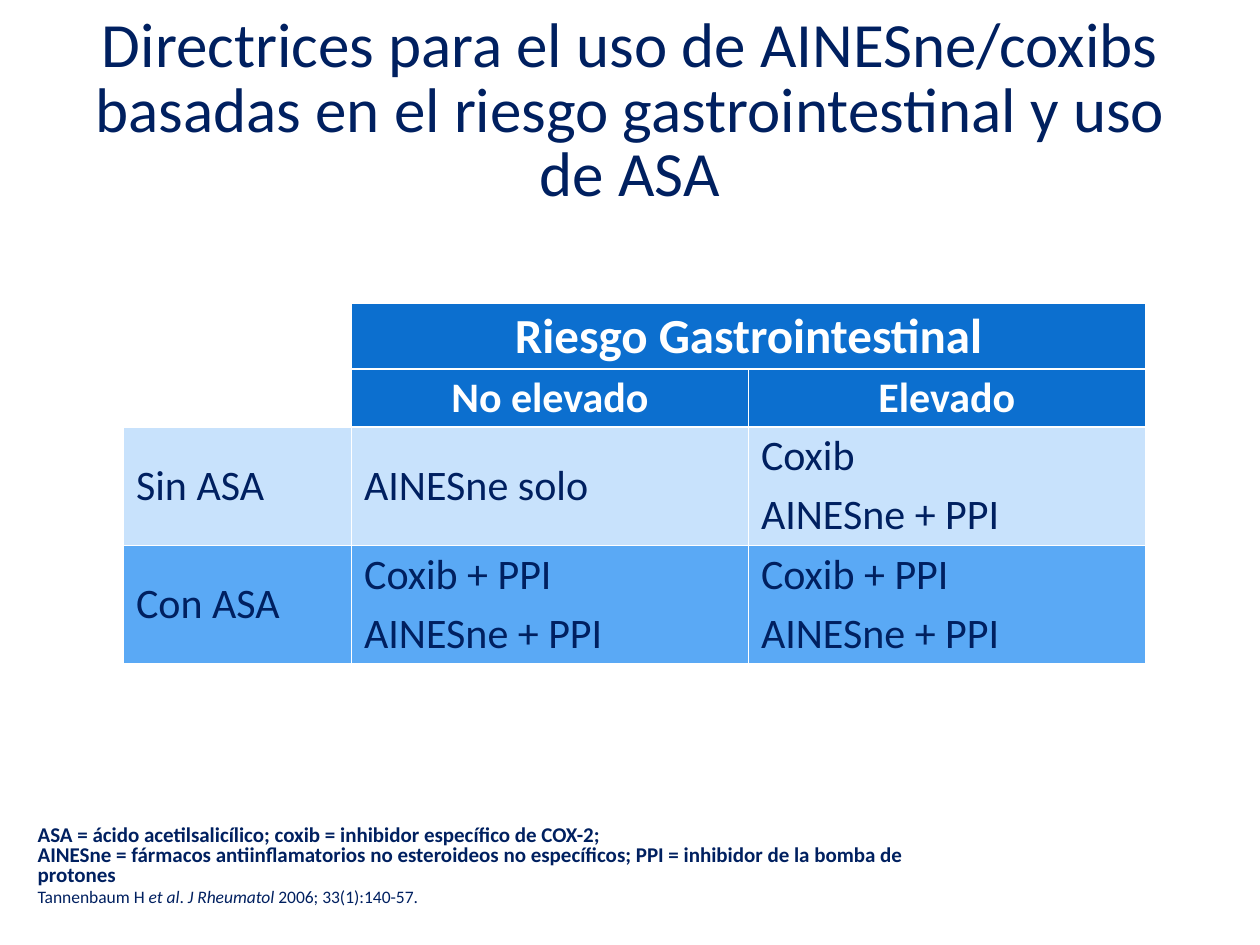
from dataclasses import dataclass

from lxml.etree import SubElement
from pptx import Presentation
from pptx.dml.color import RGBColor
from pptx.enum.text import MSO_ANCHOR, PP_ALIGN
from pptx.oxml.ns import qn
from pptx.util import Inches, Pt


@dataclass(frozen=True)
class Theme:
    font: str = "Calibri"
    navy: str = "002060"
    white: str = "FFFFFF"
    header: str = "0C6FCF"
    light: str = "C8E2FC"
    medium: str = "5AA9F5"
    title_size: int = 36
    heading_size: int = 28
    body_size: int = 24
    note_size: int = 12
    citation_size: int = 10


@dataclass(frozen=True)
class Span:
    text: str
    size: int
    color: str
    bold: bool = False
    italic: bool = False


@dataclass(frozen=True)
class CellStyle:
    fill: str
    color: str
    size: int
    bold: bool = False
    align: PP_ALIGN = PP_ALIGN.LEFT


@dataclass(frozen=True)
class Row:
    height: float
    texts: tuple
    style: CellStyle


THEME = Theme()
HEADING = CellStyle(THEME.header, THEME.white, THEME.heading_size, True, PP_ALIGN.CENTER)
SUBHEADING = CellStyle(THEME.header, THEME.white, THEME.body_size, True, PP_ALIGN.CENTER)
WITHOUT_ASA = CellStyle(THEME.light, THEME.navy, THEME.body_size)
WITH_ASA = CellStyle(THEME.medium, THEME.navy, THEME.body_size)

COLUMN_WIDTHS = (1.81, 3.15, 3.15)
ROWS = (
    Row(0.52, ("", "Riesgo Gastrointestinal", ""), HEADING),
    Row(0.46, ("", "No elevado", "Elevado"), SUBHEADING),
    Row(0.94, ("Sin ASA", "AINESne solo", "Coxib\nAINESne + PPI"), WITHOUT_ASA),
    Row(0.94, ("Con ASA", "Coxib + PPI\nAINESne + PPI", "Coxib + PPI\nAINESne + PPI"), WITH_ASA),
)

TITLE = "Directrices para el uso de AINESne/coxibs basadas en el riesgo gastrointestinal y uso de ASA"
ABBREVIATIONS = (
    "ASA = ácido acetilsalicílico; coxib = inhibidor específico de COX-2;\v"
    "AINESne = fármacos antiinflamatorios no esteroideos no específicos; "
    "PPI = inhibidor de la bomba de protones"
)
CITATION = (
    ("Tannenbaum H ", False),
    ("et al", True),
    (". ", False),
    ("J Rheumatol ", True),
    ("2006; 33(1):140-57.", False),
)


def format_run(run, span: Span) -> None:
    run.font.name = THEME.font
    run.font.size = Pt(span.size)
    run.font.bold = span.bold
    run.font.italic = span.italic
    run.font.color.rgb = RGBColor.from_string(span.color)


def write_spans(paragraph, spans: list[Span], line_spacing: float) -> None:
    paragraph.line_spacing = line_spacing
    for span in spans:
        if "\v" in span.text:
            paragraph.text = span.text
            for run in paragraph.runs:
                format_run(run, span)
        else:
            run = paragraph.add_run()
            run.text = span.text
            format_run(run, span)


def add_text_frame(page, left: float, top: float, width: float, height: float):
    box = page.shapes.add_textbox(Inches(left), Inches(top), Inches(width), Inches(height))
    box.text_frame.word_wrap = True
    return box.text_frame


def add_title(page) -> None:
    frame = add_text_frame(page, 0.35, 0.27, 9.3, 1.25)
    frame.vertical_anchor = MSO_ANCHOR.MIDDLE
    paragraph = frame.paragraphs[0]
    paragraph.alignment = PP_ALIGN.CENTER
    write_spans(paragraph, [Span(TITLE, THEME.title_size, THEME.navy)], 0.85)


def set_borders(cell, color: str) -> None:
    properties = cell._tc.get_or_add_tcPr()
    for position, side in enumerate(("lnL", "lnR", "lnT", "lnB")):
        line = SubElement(properties, qn(f"a:{side}"), w=str(Pt(1)))
        fill = SubElement(line, qn("a:solidFill"))
        SubElement(fill, qn("a:srgbClr"), val=color)
        properties.insert(position, line)


def fill_cell(cell, text: str, style: CellStyle) -> None:
    set_borders(cell, THEME.white)
    if not text:
        cell.fill.background()
        return
    cell.fill.solid()
    cell.fill.fore_color.rgb = RGBColor.from_string(style.fill)
    cell.vertical_anchor = MSO_ANCHOR.MIDDLE
    cell.text_frame.text = text
    span = Span(text, style.size, style.color, style.bold)
    for index, paragraph in enumerate(cell.text_frame.paragraphs):
        paragraph.alignment = style.align
        paragraph.line_spacing = 0.9
        if index:
            paragraph.space_before = Pt(0.3 * style.size)
        for run in paragraph.runs:
            format_run(run, span)


def add_risk_table(page) -> None:
    table = page.shapes.add_table(
        len(ROWS), len(COLUMN_WIDTHS), Inches(0.98), Inches(2.41),
        Inches(sum(COLUMN_WIDTHS)), Inches(sum(row.height for row in ROWS)),
    ).table
    table.first_row = False
    table.horz_banding = False
    for column, width in zip(table.columns, COLUMN_WIDTHS):
        column.width = Inches(width)
    for row_index, row in enumerate(ROWS):
        table.rows[row_index].height = Inches(row.height)
        for column_index, text in enumerate(row.texts):
            fill_cell(table.cell(row_index, column_index), text, row.style)
    table.cell(0, 1).merge(table.cell(0, 2))


def add_footnote(page) -> None:
    frame = add_text_frame(page, 0.2, 6.51, 7.72, 0.75)
    abbreviations = Span(ABBREVIATIONS, THEME.note_size, THEME.navy, bold=True)
    write_spans(frame.paragraphs[0], [abbreviations], 0.8)
    citation = frame.add_paragraph()
    citation.space_before = Pt(0.2 * THEME.citation_size)
    spans = [Span(text, THEME.citation_size, THEME.navy, italic=italic) for text, italic in CITATION]
    write_spans(citation, spans, 0.8)


def main() -> None:
    deck = Presentation()
    deck.slide_width = Inches(10)
    deck.slide_height = Inches(7.5)
    page = deck.slides.add_slide(deck.slide_layouts[6])
    add_title(page)
    add_risk_table(page)
    add_footnote(page)
    deck.save("out.pptx")


if __name__ == "__main__":
    main()
